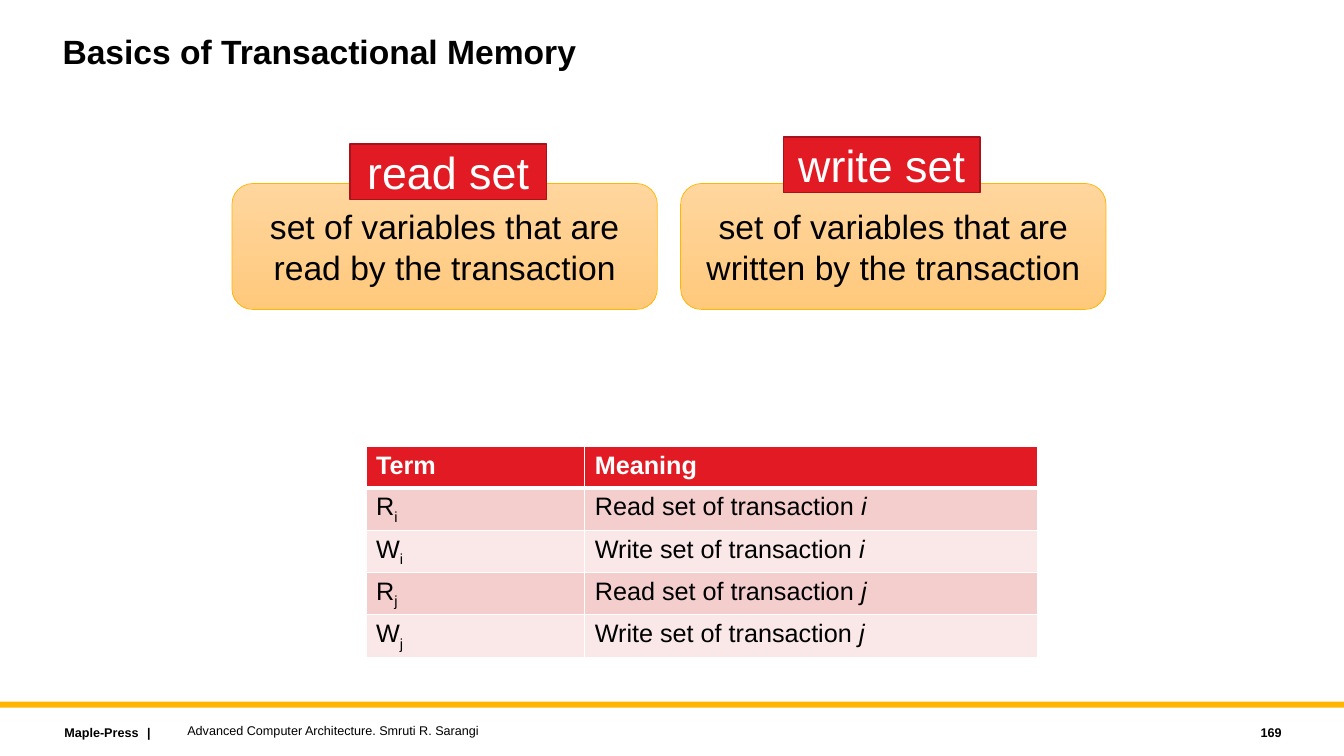
from lxml import etree
from pptx import Presentation
from pptx.dml import color
from pptx.enum import shapes, text
from pptx.oxml import ns
from pptx.util import Inches, Pt

RED, AMBER, BLACK, WHITE = "E21A23", "FFB600", "000000", "FFFFFF"


def rgb(value):
    return color.RGBColor.from_string(value)


def style(frame, size, ink, align, bold=False):
    for paragraph in frame.paragraphs:
        paragraph.alignment = align
        for run in paragraph.runs:
            run.font.name, run.font.size, run.font.bold = "Arial", Pt(size), bold
            run.font.color.rgb = rgb(ink)


LEFT, CENTER, RIGHT = text.PP_ALIGN.LEFT, text.PP_ALIGN.CENTER, text.PP_ALIGN.RIGHT
MIDDLE = text.MSO_ANCHOR.MIDDLE

prs = Presentation()
prs.slide_width, prs.slide_height = Inches(13.33), Inches(7.5)
slide = prs.slides.add_slide(prs.slide_layouts[5])

# Title
title = slide.shapes.title
title.left, title.top, title.width, title.height = map(Inches, (0.52, 0.3, 10, 0.9))
title.text_frame.text = "Basics of Transactional Memory"
title.text_frame.vertical_anchor = text.MSO_ANCHOR.TOP
title.text_frame.paragraphs[0].line_spacing = 0.9
style(title.text_frame, 24, BLACK, LEFT, True)

# Definitions of the two sets
for left, verb in ((2.3, "read"), (6.75, "written")):
    definition = slide.shapes.add_shape(
        shapes.MSO_SHAPE.ROUNDED_RECTANGLE,
        Inches(left), Inches(1.82), Inches(4.22), Inches(1.25))
    definition.shadow.inherit = False
    definition.fill.gradient()
    definition.fill.gradient_angle = 270
    for stop, shade in zip(definition.fill.gradient_stops, ("FFD69E", "FFC97C")):
        stop.color.rgb = rgb(shade)
    definition.line.color.rgb = rgb(AMBER)
    definition.line.width = Pt(0.5)
    definition.text_frame.text = f"set of variables that are\n{verb} by the transaction"
    definition.text_frame.vertical_anchor = MIDDLE
    style(definition.text_frame, 24, BLACK, CENTER)

# Red name tags above the definitions
for left, top, name in ((3.47, 1.43, "read set"), (7.77, 1.36, "write set")):
    tag = slide.shapes.add_shape(
        shapes.MSO_SHAPE.RECTANGLE, Inches(left), Inches(top), Inches(1.95), Inches(0.55))
    tag.shadow.inherit = False
    tag.fill.solid()
    tag.fill.fore_color.rgb = rgb(RED)
    tag.line.color.rgb = rgb("A7131A")
    tag.line.width = Pt(1)
    tag.text_frame.text = name
    tag.text_frame.vertical_anchor = MIDDLE
    style(tag.text_frame, 32, WHITE, CENTER)

# Table of terms: a header, then the read and write sets of transactions i and j
terms = slide.shapes.add_table(
    5, 2, Inches(3.63), Inches(4.43), Inches(6.66), Inches(2.05)).table
terms.columns[0].width, terms.columns[1].width = Inches(2.17), Inches(4.49)
rows = [(("Term", ""), ("Meaning", ""))]
for index in "ij":
    for kind in ("Read", "Write"):
        rows.append(((kind[0], index), (f"{kind} set of transaction ", index)))

for r, row in enumerate(rows):
    terms.rows[r].height = Inches(0.41)
    header = r == 0
    for c, (words, index) in enumerate(row):
        cell = terms.cell(r, c)
        cell.text_frame.text = words
        if index:
            suffix = cell.text_frame.paragraphs[0].add_run()
            suffix.text = index
            if c == 0:
                suffix._r.get_or_add_rPr().set("baseline", "-25000")
            else:
                suffix.font.italic = True
        style(cell.text_frame, 18, WHITE if header else BLACK, LEFT, header)
        # White cell borders, heavier at the header's lower edge
        props = cell._tc.get_or_add_tcPr()
        for side in "LRTB":
            heavy = (header and side == "B") or (r == 1 and side == "T")
            edge = etree.SubElement(props, ns.qn(f"a:ln{side}"), w=str(Pt(3 if heavy else 1)))
            ink = etree.SubElement(edge, ns.qn("a:solidFill"))
            etree.SubElement(ink, ns.qn("a:srgbClr"), val=WHITE)
        cell.fill.solid()
        cell.fill.fore_color.rgb = rgb(RED if header else ("FAE8E8", "F4CDCD")[r % 2])

# Footer rule
rule = slide.shapes.add_shape(
    shapes.MSO_SHAPE.RECTANGLE, 0, Inches(6.96), prs.slide_width, Inches(0.06))
rule.shadow.inherit = False
rule.fill.solid()
rule.fill.fore_color.rgb = rgb(AMBER)
rule.line.fill.background()

# Footer texts: publisher, book, page number
for left, top, width, words, align, bold in (
        (0.54, 7.14, 2.27, "Maple-Press\t|", LEFT, True),
        (1.76, 7.12, 8, "Advanced Computer Architecture. Smruti R. Sarangi", LEFT, False),
        (11.41, 7.14, 1.4, "169", RIGHT, True)):
    footer = slide.shapes.add_textbox(Inches(left), Inches(top), Inches(width), Inches(0.25))
    frame = footer.text_frame
    frame.word_wrap = True
    frame.vertical_anchor = MIDDLE
    frame.text = words
    if "\t" in words:
        tabs = etree.SubElement(frame.paragraphs[0]._p.get_or_add_pPr(), ns.qn("a:tabLst"))
        etree.SubElement(tabs, ns.qn("a:tab"), pos=str(Inches(0.82)), algn="l")
    style(frame, 9, BLACK, align, bold)

prs.save("out.pptx")
